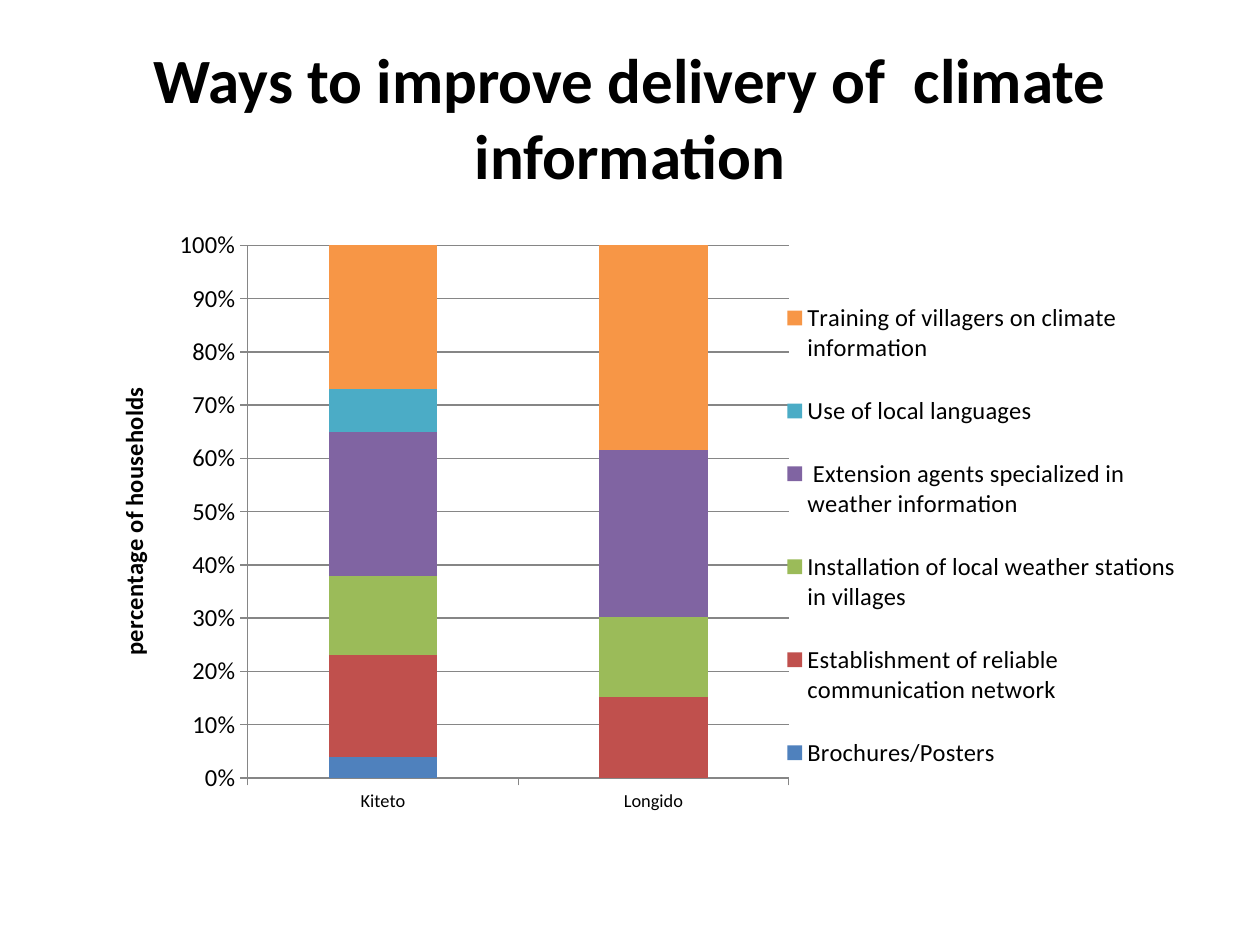
from lxml import etree
from pptx import Presentation
from pptx.chart.data import CategoryChartData
from pptx.dml.color import RGBColor
from pptx.enum.chart import XL_CHART_TYPE, XL_LEGEND_POSITION, XL_TICK_MARK
from pptx.enum.text import MSO_ANCHOR, PP_ALIGN
from pptx.oxml.ns import qn
from pptx.util import Inches, Pt

STACKED_100 = XL_CHART_TYPE.COLUMN_STACKED_100
LEGEND_RIGHT = XL_LEGEND_POSITION.RIGHT
TICK_OUTSIDE = XL_TICK_MARK.OUTSIDE
MIDDLE = MSO_ANCHOR.MIDDLE
CENTER = PP_ALIGN.CENTER

FONT = "Calibri"
BLACK = RGBColor(0x00, 0x00, 0x00)
AXIS_GRAY = RGBColor(0x86, 0x86, 0x86)
BLUE = RGBColor(0x4F, 0x81, 0xBD)
RED = RGBColor(0xC0, 0x50, 0x4D)
GREEN = RGBColor(0x9B, 0xBB, 0x59)
PURPLE = RGBColor(0x80, 0x64, 0xA2)
TEAL = RGBColor(0x4B, 0xAC, 0xC6)
ORANGE = RGBColor(0xF7, 0x96, 0x46)

DISTRICTS = ["Kiteto", "Longido"]
IMPROVEMENTS = [
    ("Brochures/Posters", (4, 0), BLUE),
    ("Establishment of reliable communication network ", (19, 15), RED),
    ("Installation of local weather stations in villages", (15, 15), GREEN),
    (" Extension agents specialized in weather information", (27, 31), PURPLE),
    ("Use of local languages ", (8, 0), TEAL),
    ("Training of villagers on climate information", (27, 38), ORANGE),
]


def style_font(font, size, bold=False):
    font.name = FONT
    font.size = Pt(size)
    font.bold = bold
    font.color.rgb = BLACK


def set_layout(parent, index, box, inner=False):
    """Place a chart part at box, given as fractions of the chart area."""
    for old_layout in parent.findall(qn("c:layout")):
        parent.remove(old_layout)
    layout = etree.Element(qn("c:layout"))
    manual = etree.SubElement(layout, qn("c:manualLayout"))
    settings = [("layoutTarget", "inner")] if inner else []
    settings += [("xMode", "edge"), ("yMode", "edge")]
    settings += zip("xywh", box)
    for tag, value in settings:
        etree.SubElement(manual, qn(f"c:{tag}")).set("val", str(value))
    parent.insert(index, layout)


def add_title(slide, left, top, width, height):
    title = slide.shapes.title
    title.left, title.top, title.width, title.height = left, top, width, height
    frame = title.text_frame
    frame.text = "Ways to improve delivery of  climate information"
    frame.vertical_anchor = MIDDLE
    frame.word_wrap = True
    heading = frame.paragraphs[0]
    heading.alignment = CENTER
    style_font(heading.font, 36, bold=True)


def format_axes(chart):
    households, districts = chart.value_axis, chart.category_axis
    for axis, size in ((households, 14), (districts, 10.5)):
        axis.major_tick_mark = TICK_OUTSIDE
        axis.format.line.color.rgb = AXIS_GRAY
        style_font(axis.tick_labels.font, size)
    households.has_major_gridlines = True
    households.major_gridlines.format.line.color.rgb = AXIS_GRAY
    households.tick_labels.number_format = "0%"
    households.tick_labels.number_format_is_linked = False
    axis_title = households.axis_title.text_frame
    axis_title.text = "percentage of households"
    style_font(axis_title.paragraphs[0].font, 14, bold=True)


def add_improvements_chart(slide, left, top, width, height):
    data = CategoryChartData(number_format="General")
    data.categories = DISTRICTS
    for name, values, _ in IMPROVEMENTS:
        data.add_series(name, values)
    chart = slide.shapes.add_chart(
        STACKED_100, left, top, width, height, data).chart
    chart.has_title = False
    style_font(chart.font, 10.5)

    plot = chart.plots[0]
    plot.gap_width = 150
    plot.overlap = 100
    plot.vary_by_categories = False
    for series, (_, _, color) in zip(plot.series, IMPROVEMENTS):
        series.format.fill.solid()
        series.format.fill.fore_color.rgb = color
    format_axes(chart)

    chart.has_legend = True
    legend = chart.legend
    legend.position = LEGEND_RIGHT
    legend.include_in_layout = False
    style_font(legend.font, 14)

    plot_area = chart.element.find(f".//{qn('c:plotArea')}") if hasattr(
        chart, "element") else chart._chartSpace.find(f".//{qn('c:plotArea')}")
    set_layout(plot_area, 0, (0.163, 0.04, 0.477, 0.854), inner=True)
    set_layout(plot_area.getparent().find(qn("c:legend")), 1,
               (0.63, 0.08, 0.36, 0.85))


def main():
    presentation = Presentation()
    presentation.slide_width = Inches(10)
    presentation.slide_height = Inches(7.5)
    title_only = presentation.slide_layouts[5]
    slide = presentation.slides.add_slide(title_only)
    add_title(slide, Inches(0.5), Inches(0.3), Inches(9), Inches(1.25))
    add_improvements_chart(
        slide, Inches(0.5), Inches(1.75), Inches(9), Inches(4.95))
    presentation.save("out.pptx")


if __name__ == "__main__":
    main()
